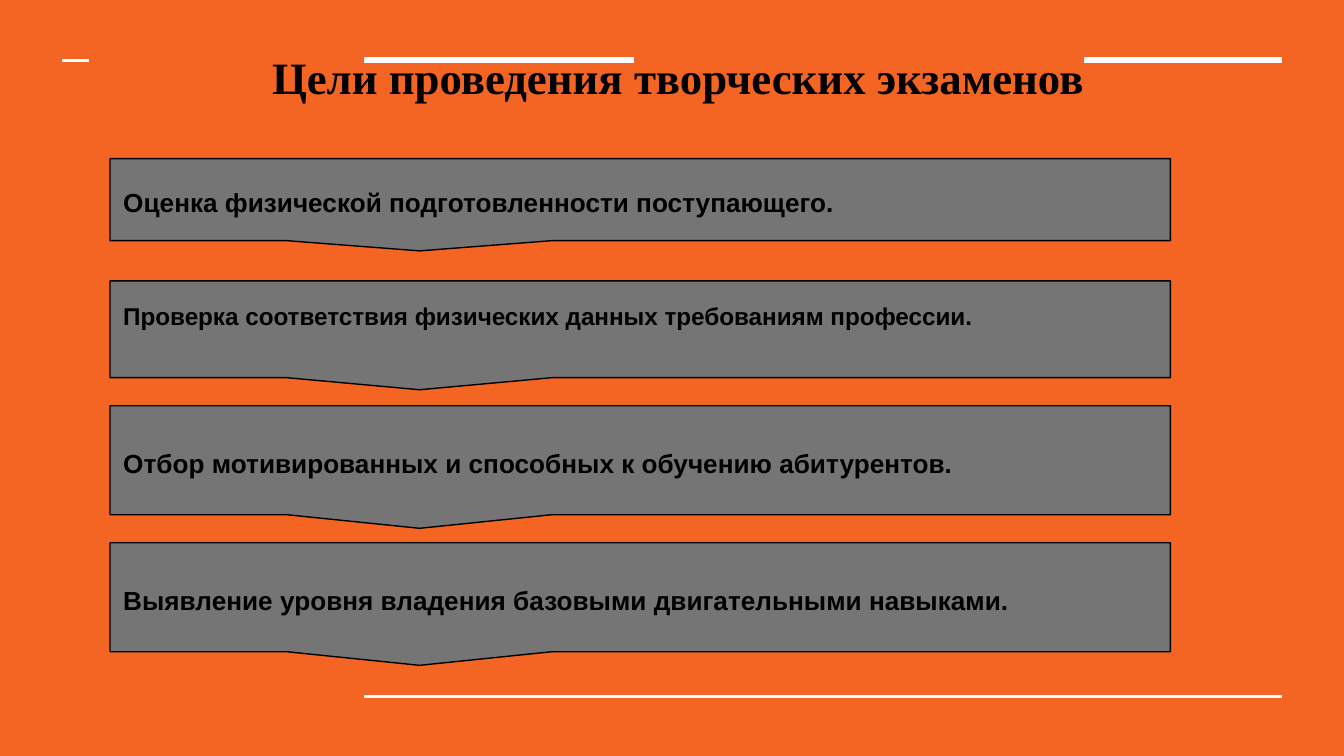
import pptx
import pptx.util
import pptx.dml.color
import pptx.enum.shapes
import pptx.enum.text
import pptx.oxml

Cm, Pt = pptx.util.Cm, pptx.util.Pt
anchor = pptx.enum.text.MSO_ANCHOR
align = pptx.enum.text.PP_ALIGN
NS = 'xmlns:a="http://schemas.openxmlformats.org/drawingml/2006/main"'


def tint(code):
    return pptx.dml.color.RGBColor.from_string(code)


def style(item, form):
    for key, value in form.items():
        setattr(item, key, value)


deck = pptx.Presentation()
style(deck, {"slide_width": Cm(25.4), "slide_height": Cm(14.29)})
slide = deck.slides.add_slide(deck.slide_layouts[5])
slide.background.fill.solid()
slide.background.fill.fore_color.rgb = tint("F46524")
shapes = slide.shapes

rules = [(6.88, 24.23, 1.14, 3), (6.88, 24.23, 13.16, 1.5), (1.18, 1.69, 1.14, 1.5)]
for left, right, top, width in rules:
    rule = shapes.add_connector(
        pptx.enum.shapes.MSO_CONNECTOR.STRAIGHT, Cm(left), Cm(top), Cm(right), Cm(top))
    rule.line.color.rgb = tint("FFFFFF")
    rule.line.width = Pt(width)
    rule.element.spPr.append(pptx.oxml.parse_xml(f"<a:effectLst {NS}/>"))

inset = dict.fromkeys(
    ["margin_left", "margin_top", "margin_right", "margin_bottom"], Cm(0.25))
frame = {"word_wrap": True, "auto_size": pptx.enum.text.MSO_AUTO_SIZE.NONE, **inset}

title = shapes.title
shapes.element.append(title.element)
style(title, {"left": Cm(2.08), "top": Cm(0.53), "width": Cm(21.46), "height": Cm(3.53)})
style(title.text_frame, {**frame, "vertical_anchor": anchor.TOP})
para = title.text_frame.paragraphs[0]
style(para, {"alignment": align.CENTER, "line_spacing": 1.15, "space_before": Pt(24)})
for words in ["Цели проведения ", "творческих экзаменов"]:
    run = para.add_run()
    run.text = words
    style(run.font, {"name": "Times New Roman", "size": Pt(24), "bold": True})
    run.font.color.rgb = tint("000000")
mark = pptx.oxml.parse_xml(f'<a:highlight {NS}><a:srgbClr val="F46524"/></a:highlight>')
run.font.fill._xPr.find(pptx.oxml.ns.qn("a:latin")).addprevious(mark)

goals = [
    (3, 1.55, 14, 0.25, "Оценка физической подготовленности поступающего."),
    (5.31, 1.83, 13, 0.86, "Проверка соответствия физических данных требованиям профессии."),
    (7.67, 2.06, 14, 0.25, "Отбор мотивированных и способных к обучению абитурентов."),
    (10.26, 2.06, 14, 0.25, "Выявление уровня владения базовыми двигательными навыками."),
]
for top, height, size, base, words in goals:
    box = shapes.add_shape(
        pptx.enum.shapes.MSO_SHAPE.RECTANGULAR_CALLOUT,
        Cm(2.08), Cm(top), Cm(20.04), Cm(height))
    box.adjustments[0], box.adjustments[1] = -0.208, 0.625
    box.shadow.inherit = False
    box.fill.solid()
    box.fill.fore_color.rgb = tint("757575")
    box.line.color.rgb = tint("000000")
    box.line.width = Pt(0.75)
    style(box.text_frame,
          {**frame, "vertical_anchor": anchor.MIDDLE, "margin_bottom": Cm(base)})
    para = box.text_frame.paragraphs[0]
    para.text = words
    style(para, {"alignment": align.LEFT, "line_spacing": 1.15, "space_before": Pt(12)})
    font = para.runs[0].font
    style(font, {"name": "Arial", "size": Pt(size), "bold": True})
    font.color.rgb = tint("000000")

deck.save("out.pptx")
